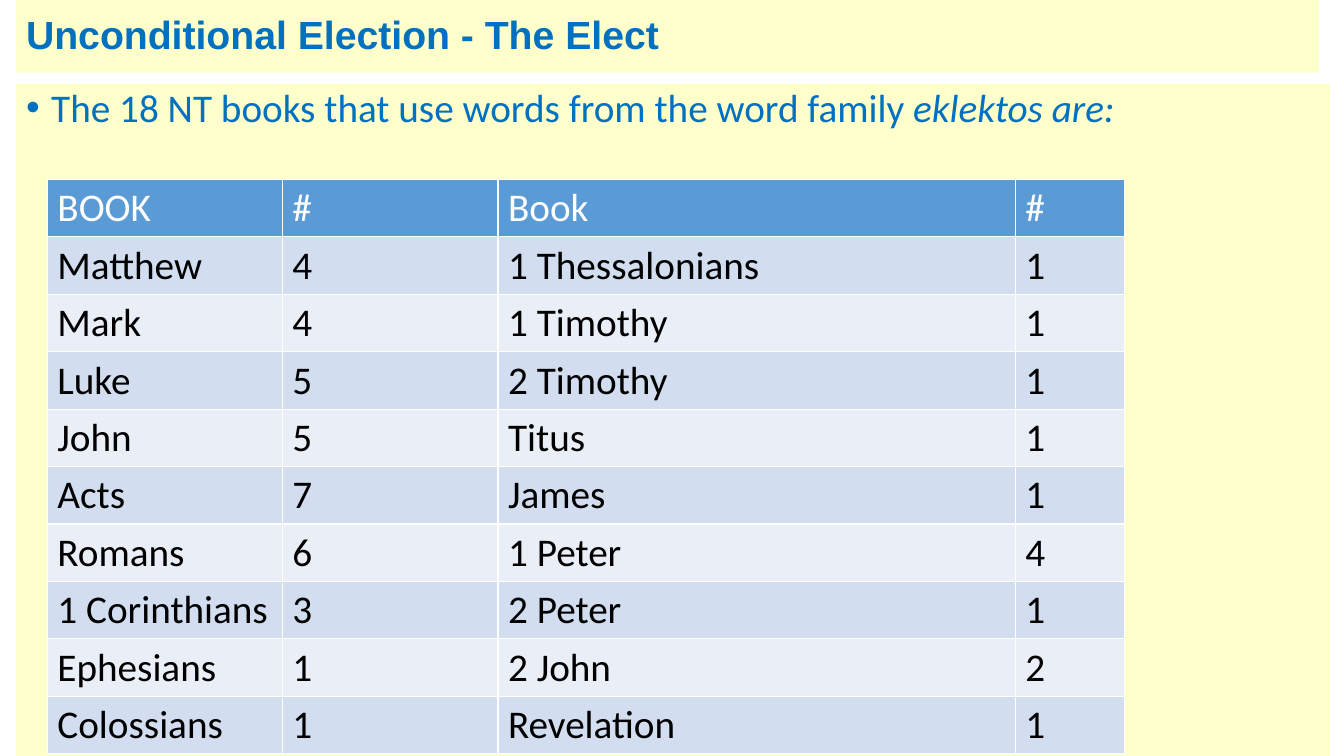
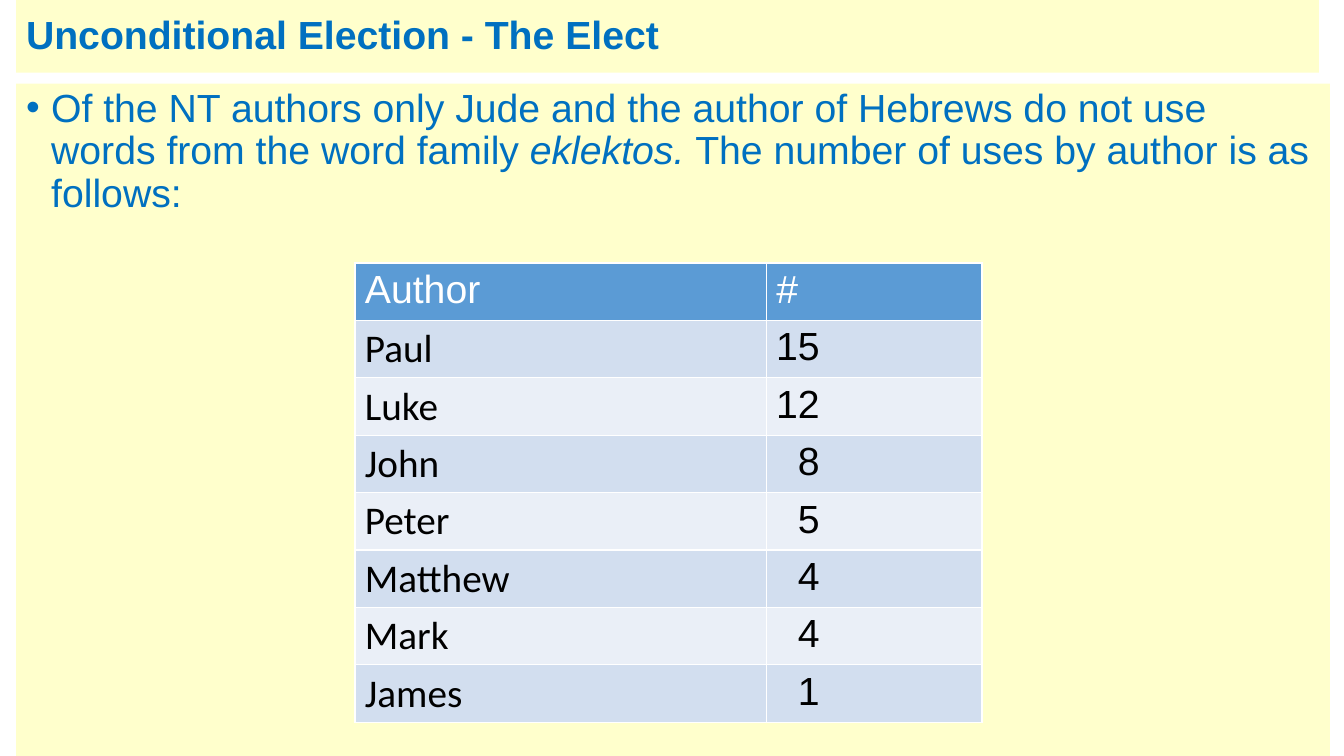
from pptx import Presentation
from pptx.dml.color import RGBColor
from pptx.enum.text import MSO_ANCHOR, PP_ALIGN
from pptx.oxml.xmlchemy import OxmlElement
from pptx.util import Inches, Pt

TOP, MIDDLE = MSO_ANCHOR.TOP, MSO_ANCHOR.MIDDLE
RIGHT = PP_ALIGN.RIGHT

BLUE = RGBColor(0x00, 0x70, 0xC0)
CREAM = RGBColor(0xFF, 0xFF, 0xCC)
WHITE = RGBColor(0xFF, 0xFF, 0xFF)
BLACK = RGBColor(0x00, 0x00, 0x00)
HEADER_FILL = RGBColor(0x5B, 0x9B, 0xD5)
BAND_FILLS = (RGBColor(0xD2, 0xDE, 0xEF), RGBColor(0xEA, 0xEF, 0xF7))

ARIAL, CALIBRI = "Arial", "Calibri"
TEXT_SIZE = Pt(28)
TITLE = "Unconditional Election - The Elect"

BOOKS = [
    ("BOOK", "#", "Book", "#"),
    ("Matthew", "4", "1 Thessalonians", "1"),
    ("Mark", "4", "1 Timothy", "1"),
    ("Luke", "5", "2 Timothy", "1"),
    ("John", "5", "Titus", "1"),
    ("Acts", "7", "James", "1"),
    ("Romans", "6", "1 Peter", "4"),
    ("1 Corinthians", "3", "2 Peter", "1"),
    ("Ephesians", "1", "2 John", "2"),
    ("Colossians", "1", "Revelation", "1"),
]
AUTHORS = [
    ("Author", "#"),
    ("Paul", "15"),
    ("Luke", "12"),
    ("John", "8"),
    ("Peter", "5"),
    ("Matthew", "4"),
    ("Mark", "4"),
    ("James", "1"),
]


def add_run(paragraph, text, color, **formats):
    run = paragraph.add_run()
    run.text = text
    run.font.color.rgb = color
    for name, value in {"size": TEXT_SIZE, "bold": False, **formats}.items():
        setattr(run.font, name, value)


def add_panel(slide, left, top, width, height, anchor):
    """Add a cream text panel and return its first paragraph."""
    panel = slide.shapes.add_textbox(
        Inches(left), Inches(top), Inches(width), Inches(height))
    panel.fill.solid()
    panel.fill.fore_color.rgb = CREAM
    frame = panel.text_frame
    frame.word_wrap = True
    frame.vertical_anchor = anchor
    paragraph = frame.paragraphs[0]
    paragraph.line_spacing = 0.9
    return paragraph


def set_bullet(paragraph):
    properties = paragraph._p.get_or_add_pPr()
    properties.set("marL", str(Inches(0.25)))
    properties.set("indent", str(-Inches(0.25)))
    for tag, name, value in (("a:buFont", "typeface", ARIAL),
                             ("a:buChar", "char", "•")):
        element = OxmlElement(tag)
        element.set(name, value)
        properties.append(element)


def add_content_slide(presentation, font_name, statement):
    """Add a slide with the title and a bulleted statement of (text, italic) parts."""
    slide = presentation.slides.add_slide(presentation.slide_layouts[6])
    title = add_panel(slide, 0.16, 0, 12.92, 0.72, MIDDLE)
    add_run(title, TITLE, BLUE, name=ARIAL, bold=True)
    body = add_panel(slide, 0.16, 0.83, 13.03, 6.67, TOP)
    body.space_before = Pt(10)
    set_bullet(body)
    for text, italic in statement:
        add_run(body, text, BLUE, name=font_name, italic=italic)
    return slide


def add_banded_table(slide, left, top, column_widths, rows, header_font,
                     column_fonts, header_height=0.57, row_height=0.57):
    heights = [header_height] + [row_height] * (len(rows) - 1)
    table = slide.shapes.add_table(
        len(rows), len(column_widths), Inches(left), Inches(top),
        Inches(sum(column_widths)), Inches(sum(heights))).table
    for column, width in zip(table.columns, column_widths):
        column.width = Inches(width)
    for row_index, (values, height) in enumerate(zip(rows, heights)):
        table.rows[row_index].height = Inches(height)
        is_header = row_index == 0
        fill = HEADER_FILL if is_header else BAND_FILLS[(row_index - 1) % 2]
        for column_index, value in enumerate(values):
            cell = table.cell(row_index, column_index)
            cell.fill.solid()
            cell.fill.fore_color.rgb = fill
            add_run(cell.text_frame.paragraphs[0], value,
                    WHITE if is_header else BLACK,
                    name=header_font if is_header else column_fonts[column_index])
    return table


def align_units(table, column_index, right_margin):
    """Line up the digits of a number column below its header."""
    for row_index in range(1, len(table.rows)):
        cell = table.cell(row_index, column_index)
        cell.margin_left = 0
        cell.margin_right = Inches(right_margin)
        cell.text_frame.paragraphs[0].alignment = RIGHT


def main():
    presentation = Presentation()
    presentation.slide_width = Inches(13.33)
    presentation.slide_height = Inches(7.5)

    books_slide = add_content_slide(presentation, CALIBRI, [
        ("The 18 NT books that use words from the word family ", False),
        ("eklektos are:", True),
    ])
    add_banded_table(books_slide, 0.47, 1.78, (2.33, 2.14, 5.13, 1.08), BOOKS,
                     CALIBRI, (CALIBRI,) * 4)

    authors_slide = add_content_slide(presentation, ARIAL, [
        ("Of the NT authors only Jude and the author of Hebrews do not use "
         "words from the word family ", False),
        ("eklektos. ", True),
        ("The number of uses by author is as follows:", False),
    ])
    authors_table = add_banded_table(authors_slide, 3.52, 2.61, (4.08, 2.14),
                                     AUTHORS, ARIAL, (CALIBRI, ARIAL),
                                     header_height=0.53)
    align_units(authors_table, 1, 1.61)

    presentation.save("out.pptx")


if __name__ == "__main__":
    main()
